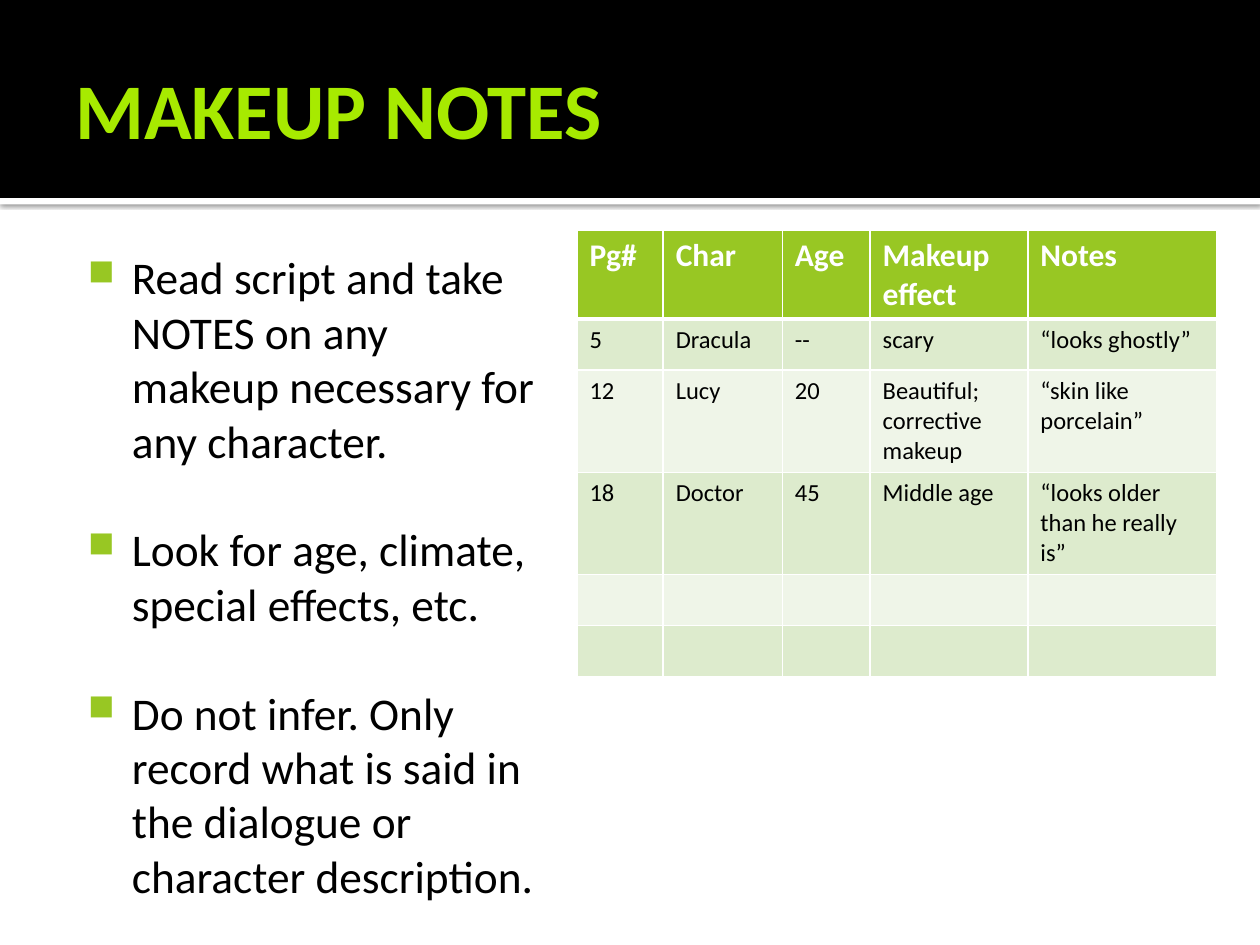
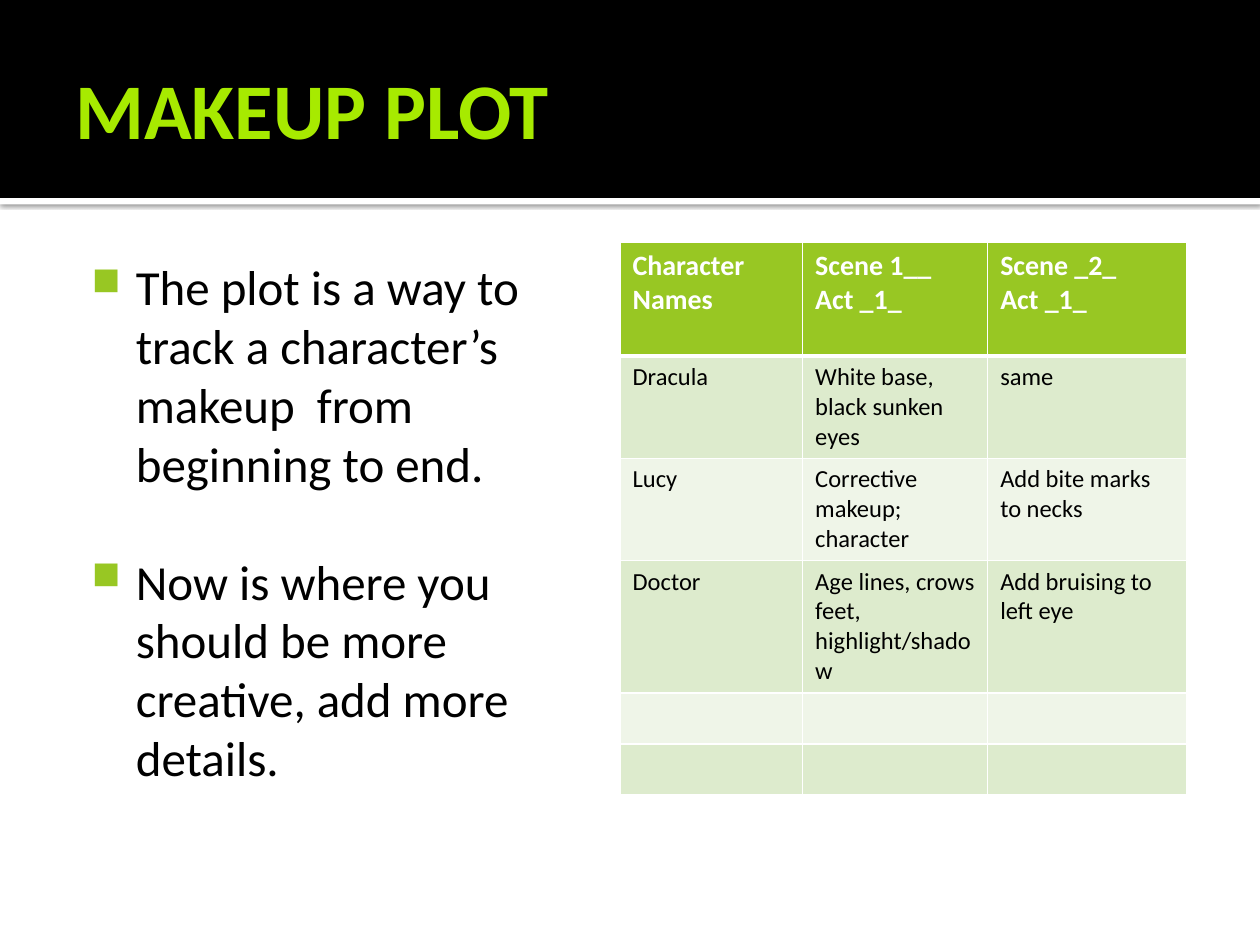
from dataclasses import dataclass

import lxml.etree
import pptx
import pptx.dml.color
import pptx.enum.shapes
import pptx.enum.text
import pptx.oxml
import pptx.oxml.ns
import pptx.presentation
import pptx.shapes.autoshape
import pptx.slide
import pptx.table
import pptx.text.text
import pptx.util

Cm = pptx.util.Cm
RGBColor = pptx.dml.color.RGBColor

BLACK = RGBColor(0x00, 0x00, 0x00)
WHITE = RGBColor(0xFF, 0xFF, 0xFF)
TITLE_LIME = RGBColor(0xA7, 0xEA, 0x00)
ACCENT_GREEN = RGBColor(0x98, 0xC7, 0x23)
ROW_TINTS = (RGBColor(0xDD, 0xEB, 0xCD), RGBColor(0xEF, 0xF5, 0xE8))

FONT = "Calibri"
SLIDE_WIDTH = Cm(25.4)
SLIDE_HEIGHT = Cm(19.05)
BAND_HEIGHT = Cm(3.99)
STRIP_HEIGHT = Cm(0.13)
WIDE_INSET = Cm(0.25)
NARROW_INSET = Cm(0.13)
BULLET_INDENT = Cm(1.22)
BULLET_HANG = Cm(0.89)
CELL_SIZE = 14


@dataclass(frozen=True)
class Box:
    left: pptx.util.Length
    top: pptx.util.Length
    width: pptx.util.Length
    height: pptx.util.Length


@dataclass(frozen=True)
class BulletList:
    box: Box
    size: float
    items: tuple[str, ...]


@dataclass(frozen=True)
class Grid:
    """A table; a line break in a cell's text starts a new paragraph."""

    left: pptx.util.Length
    top: pptx.util.Length
    column_widths: tuple[float, ...]
    row_heights: tuple[float, ...]
    header_size: float
    rows: tuple[tuple[str, ...], ...]


@dataclass(frozen=True)
class Lesson:
    title: str
    bullets: BulletList
    grid: Grid


TITLE_BOX = Box(Cm(1.27), Cm(0.43), Cm(22.86), Cm(3.48))

LESSONS = (
    Lesson(
        "MAKEUP NOTES",
        BulletList(
            Box(Cm(1.19), Cm(4.78), Cm(10.03), Cm(13.64)),
            25.9,
            (
                "Read script and take NOTES on any makeup necessary for any character.",
                "Look for age, climate, special effects, etc.",
                "Do not infer. Only record what is said in the dialogue or character description.",
            ),
        ),
        Grid(
            Cm(11.63),
            Cm(4.65),
            (1.74, 2.4, 1.77, 3.18, 3.8),
            (1.78, 1.03, 2.06, 2.06, 1.03, 1.03),
            18,
            (
                ("Pg#", "Char", "Age", "Makeup\neffect", "Notes"),
                ("5", "Dracula", "--", "scary", "“looks ghostly”"),
                ("12", "Lucy", "20", "Beautiful; corrective makeup", "“skin like porcelain”"),
                ("18", "Doctor", "45", "Middle age", "“looks older than he really is”"),
            ),
        ),
    ),
    Lesson(
        "MAKEUP PLOT",
        BulletList(
            Box(Cm(1.27), Cm(4.93), Cm(11.23), Cm(12.85)),
            28,
            (
                "The plot is a way to track a character’s makeup  from beginning to end.",
                "Now is where you should be more creative, add more details.",
            ),
        ),
        Grid(
            Cm(12.5),
            Cm(4.88),
            (3.68, 3.73, 4.02),
            (2.3, 2.06, 2.06, 2.67, 1.03, 1.03),
            16,
            (
                ("Character\nNames", "Scene 1__  Act _1_", "Scene _2_\nAct _1_"),
                ("Dracula", "White base, black sunken eyes", "same"),
                ("Lucy", "Corrective makeup; character", "Add bite marks to necks"),
                ("Doctor", "Age lines, crows feet, highlight/shadow", "Add bruising to left eye"),
            ),
        ),
    ),
)


def write_text(
    frame: pptx.text.text.TextFrame,
    lines: tuple[str, ...] | list[str],
    *,
    size: float,
    color: RGBColor = BLACK,
    bold: bool = False,
    gap: float = 0,
    bulleted: bool = False,
) -> None:
    """Write one paragraph per line, with a gap in points between them."""
    for index, line in enumerate(lines):
        paragraph = frame.add_paragraph() if index else frame.paragraphs[0]
        if index and gap:
            paragraph.space_before = pptx.util.Pt(gap)
        if bulleted:
            add_bullet(paragraph)
        run = paragraph.add_run()
        run.text = line
        run.font.name = FONT
        run.font.size = pptx.util.Pt(size)
        run.font.bold = bold
        run.font.color.rgb = color


def add_bullet(paragraph: pptx.text.text._Paragraph) -> None:
    properties = paragraph._p.get_or_add_pPr()
    properties.set("marL", str(BULLET_INDENT))
    properties.set("indent", str(-BULLET_HANG))
    color = lxml.etree.SubElement(properties, pptx.oxml.ns.qn("a:buClr"))
    lxml.etree.SubElement(color, pptx.oxml.ns.qn("a:srgbClr"), val=str(ACCENT_GREEN))
    lxml.etree.SubElement(properties, pptx.oxml.ns.qn("a:buSzPct"), val="80000")
    lxml.etree.SubElement(properties, pptx.oxml.ns.qn("a:buChar"), char="■")


def add_text_frame(
    slide: pptx.slide.Slide, box: Box, top_inset: pptx.util.Length, right_inset: pptx.util.Length
) -> pptx.text.text.TextFrame:
    shape = slide.shapes.add_textbox(box.left, box.top, box.width, box.height)
    frame = shape.text_frame
    frame.word_wrap = True
    frame.margin_left, frame.margin_bottom = WIDE_INSET, NARROW_INSET
    frame.margin_top, frame.margin_right = top_inset, right_inset
    return frame


def add_band(
    slide: pptx.slide.Slide, top: pptx.util.Length, height: pptx.util.Length, color: RGBColor
) -> pptx.shapes.autoshape.Shape:
    shape = slide.shapes.add_shape(
        pptx.enum.shapes.MSO_SHAPE.RECTANGLE, 0, top, SLIDE_WIDTH, height
    )
    shape.shadow.inherit = False
    shape.fill.solid()
    shape.fill.fore_color.rgb = color
    shape.line.fill.background()
    return shape


def cast_shadow_down(shape: pptx.shapes.autoshape.Shape) -> None:
    effects = shape._element.spPr.find(pptx.oxml.ns.qn("a:effectLst"))
    shadow = lxml.etree.SubElement(
        effects,
        pptx.oxml.ns.qn("a:outerShdw"),
        blurRad=str(pptx.util.Pt(2.5)),
        dist=str(pptx.util.Pt(0.8)),
        dir="5400000",
        algn="tl",
        rotWithShape="0",
    )
    color = lxml.etree.SubElement(shadow, pptx.oxml.ns.qn("a:srgbClr"), val=str(BLACK))
    lxml.etree.SubElement(color, pptx.oxml.ns.qn("a:alpha"), val="60000")


def add_header(slide: pptx.slide.Slide, title: str) -> None:
    cast_shadow_down(add_band(slide, BAND_HEIGHT, STRIP_HEIGHT, WHITE))
    add_band(slide, Cm(0), BAND_HEIGHT, BLACK)
    frame = add_text_frame(slide, TITLE_BOX, NARROW_INSET, NARROW_INSET)
    frame.vertical_anchor = pptx.enum.text.MSO_ANCHOR.MIDDLE
    write_text(frame, [title], size=45, color=TITLE_LIME, bold=True)


def add_bullet_list(slide: pptx.slide.Slide, bullets: BulletList) -> None:
    frame = add_text_frame(slide, bullets.box, WIDE_INSET, WIDE_INSET)
    line_height = round(bullets.size * 1.2, 1)
    write_text(frame, bullets.items, size=bullets.size, gap=line_height, bulleted=True)


def set_borders(cell: pptx.table._Cell, row_index: int) -> None:
    """Draw white borders, with a heavier rule between header and body."""
    widths = {
        "L": 1,
        "R": 1,
        "T": 3 if row_index == 1 else 1,
        "B": 3 if row_index == 0 else 1,
    }
    properties = cell._tc.get_or_add_tcPr()
    for side, width in widths.items():
        line = lxml.etree.SubElement(
            properties, pptx.oxml.ns.qn(f"a:ln{side}"), w=str(pptx.util.Pt(width))
        )
        fill = lxml.etree.SubElement(line, pptx.oxml.ns.qn("a:solidFill"))
        lxml.etree.SubElement(fill, pptx.oxml.ns.qn("a:srgbClr"), val=str(WHITE))


def add_grid(slide: pptx.slide.Slide, grid: Grid) -> None:
    """Draw the table; rows beyond the given texts stay empty."""
    table = slide.shapes.add_table(
        len(grid.row_heights),
        len(grid.column_widths),
        grid.left,
        grid.top,
        Cm(sum(grid.column_widths)),
        Cm(sum(grid.row_heights)),
    ).table
    for column, width in zip(table.columns, grid.column_widths):
        column.width = Cm(width)
    for row_index, (row, height) in enumerate(zip(table.rows, grid.row_heights)):
        row.height = Cm(height)
        is_header = row_index == 0
        for cell in row.cells:
            set_borders(cell, row_index)
            cell.fill.solid()
            cell.fill.fore_color.rgb = ACCENT_GREEN if is_header else ROW_TINTS[(row_index - 1) % 2]
        texts = grid.rows[row_index] if row_index < len(grid.rows) else ()
        for cell, text in zip(row.cells, texts):
            write_text(
                cell.text_frame,
                text.split("\n"),
                size=grid.header_size if is_header else CELL_SIZE,
                color=WHITE if is_header else BLACK,
                bold=is_header,
            )


def add_lesson(presentation: pptx.presentation.Presentation, lesson: Lesson) -> None:
    slide = presentation.slides.add_slide(presentation.slide_layouts[6])
    add_header(slide, lesson.title)
    add_bullet_list(slide, lesson.bullets)
    add_grid(slide, lesson.grid)


def main() -> None:
    presentation = pptx.Presentation()
    presentation.slide_width = SLIDE_WIDTH
    presentation.slide_height = SLIDE_HEIGHT
    for lesson in LESSONS:
        add_lesson(presentation, lesson)
    presentation.save("out.pptx")


if __name__ == "__main__":
    main()
